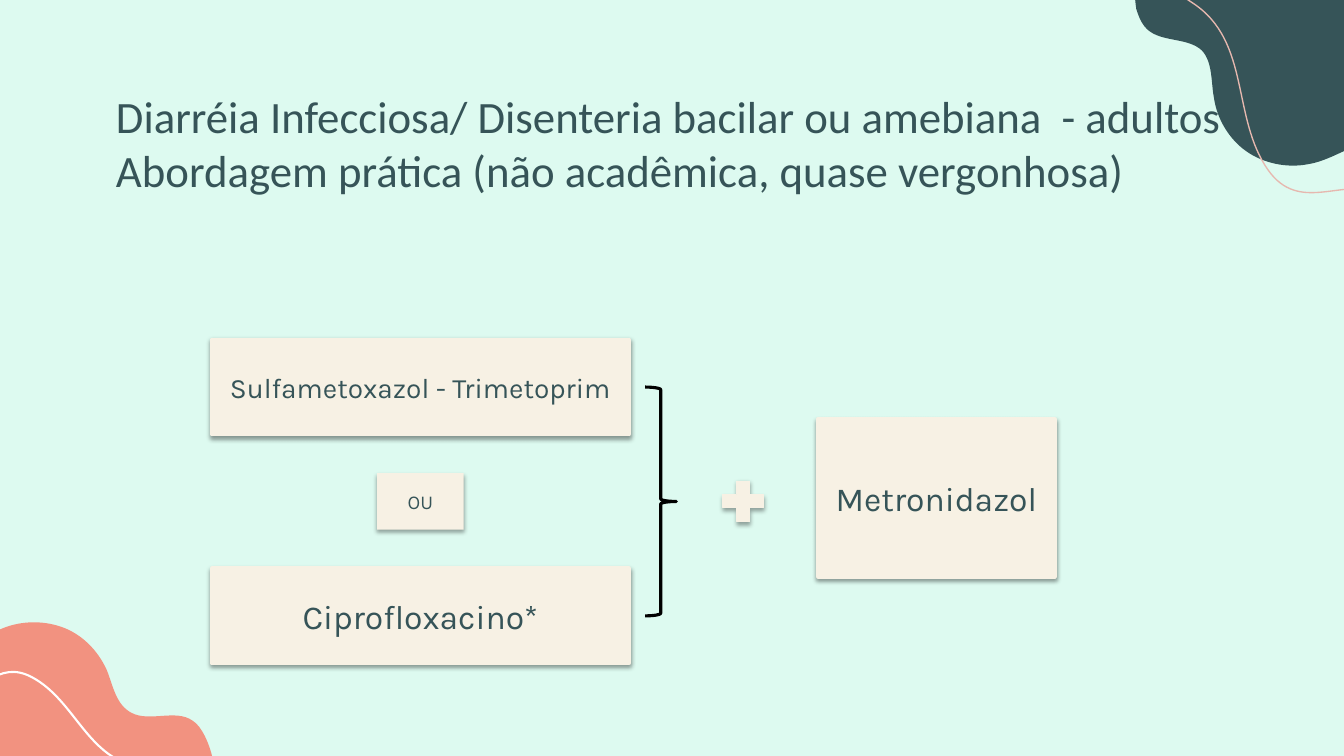
from lxml import etree
from pptx import Presentation
from pptx.dml.color import RGBColor
from pptx.enum.shapes import MSO_SHAPE
from pptx.enum.text import MSO_ANCHOR, MSO_AUTO_SIZE, PP_ALIGN
from pptx.oxml import parse_xml
from pptx.oxml.ns import nsdecls, qn
from pptx.util import Inches, Pt

RECTANGLE, PLUS, BRACE = MSO_SHAPE.RECTANGLE, MSO_SHAPE.MATH_PLUS, MSO_SHAPE.RIGHT_BRACE
CENTER, LEFT = PP_ALIGN.CENTER, PP_ALIGN.LEFT
MIDDLE, TOP = MSO_ANCHOR.MIDDLE, MSO_ANCHOR.TOP

MINT = RGBColor(0xDD, 0xFA, 0xF0)
TEAL = RGBColor(0x36, 0x54, 0x58)
CORAL = RGBColor(0xF2, 0x92, 0x80)
CREAM = RGBColor(0xF7, 0xF1, 0xE4)
PINK = RGBColor(0xE6, 0xB8, 0xAF)
WHITE = RGBColor(0xFF, 0xFF, 0xFF)
BLACK = RGBColor(0, 0, 0)

WIDTH, HEIGHT = Inches(13.33), Inches(7.5)

# Centres, in percent of the slide's width and height
ANTIBIOTIC_COLUMN = 31.28
FIRST_ROW, LAST_ROW = 51.2, 81.47
AXIS = (FIRST_ROW + LAST_ROW) / 2

TITLE_LINES = (
    "Diarréia Infecciosa/ Disenteria bacilar ou amebiana  - adultos",
    "Abordagem prática (não acadêmica, quase vergonhosa)",
)

# Outlines in inches: a start point, then two control points and an end per curve
TEAL_BLOB = [
    (12.97, 1.63), (12.76, 1.67), (12.53, 1.62), (12.36, 1.5),
    (12.19, 1.38), (12.07, 1.18), (12.04, 0.97), (12.01, 0.81), (12.03, 0.62), (11.92, 0.5),
    (11.77, 0.36), (11.48, 0.43), (11.35, 0.26), (11.31, 0.21), (11.29, 0.15), (11.27, 0.09),
    (11.24, -0.11), (11.25, -0.32), (11.33, -0.51), (11.37, -0.61), (11.42, -0.71), (11.51, -0.77),
    (11.62, -0.85), (11.77, -0.87), (11.9, -0.87), (12.27, -0.86), (12.65, -0.76), (12.96, -0.56),
    (13.14, -0.44), (13.29, -0.29), (13.44, -0.12), (13.55, 0.01), (13.67, 0.14), (13.75, 0.3),
    (13.87, 0.53), (14.01, 1.05), (13.82, 1.28), (13.75, 1.37), (13.61, 1.39), (13.5, 1.43),
    (13.32, 1.49), (13.16, 1.6), (12.97, 1.63),
]
CORAL_BLOB = [
    (-0.01, 6.25), (0.18, 6.16), (0.41, 6.15), (0.61, 6.22),
    (0.81, 6.29), (0.97, 6.45), (1.06, 6.65), (1.12, 6.8), (1.15, 6.99), (1.3, 7.07),
    (1.48, 7.17), (1.74, 7.03), (1.91, 7.15), (1.96, 7.18), (2, 7.24), (2.03, 7.3),
    (2.12, 7.48), (2.15, 7.69), (2.13, 7.89), (2.12, 8), (2.09, 8.11), (2.03, 8.19),
    (1.94, 8.3), (1.8, 8.35), (1.67, 8.38), (1.31, 8.48), (0.93, 8.48), (0.57, 8.36),
    (0.37, 8.3), (0.18, 8.19), (0, 8.07), (-0.15, 7.98), (-0.3, 7.88), (-0.41, 7.75),
    (-0.6, 7.55), (-0.87, 7.1), (-0.75, 6.82), (-0.7, 6.71), (-0.57, 6.66), (-0.48, 6.59),
    (-0.32, 6.48), (-0.19, 6.34), (-0.01, 6.25),
]
WHITE_WAVE = [
    (0.93, 9.19), (0.96, 9.19), (0.98, 9.19), (1.01, 9.18),
    (1.59, 9.13), (2.36, 8.88), (2.42, 8.21), (2.43, 8.03), (2.35, 7.82), (2.19, 7.72),
    (1.94, 7.58), (1.67, 7.65), (1.4, 7.61), (0.87, 7.54), (0.75, 6.95), (0.32, 6.72),
    (-0.03, 6.53), (-0.2, 6.9), (-0.49, 6.94), (-0.83, 6.98), (-1.04, 6.52), (-1.38, 6.55),
    (-1.5, 6.56), (-1.55, 6.71), (-1.57, 6.83), (-1.63, 7.5), (-1.26, 8.22), (-0.7, 8.67),
    (-0.23, 9.05), (0.37, 9.22), (0.93, 9.19),
]
PINK_WAVE = [
    (13.28, -1.55), (13.25, -1.56), (13.21, -1.57), (13.18, -1.59),
    (12.48, -1.85), (11.43, -2), (10.98, -1.26), (10.86, -1.05), (10.84, -0.76), (10.97, -0.55),
    (11.18, -0.24), (11.54, -0.17), (11.83, 0.03), (12.41, 0.41), (12.21, 1.17), (12.58, 1.69),
    (12.88, 2.11), (13.29, 1.78), (13.65, 1.9), (14.07, 2.04), (14.06, 2.7), (14.46, 2.86),
    (14.62, 2.92), (14.76, 2.77), (14.85, 2.63), (15.3, 1.89), (15.28, 0.84), (14.89, -0.01),
    (14.56, -0.72), (13.95, -1.26), (13.28, -1.55),
]


def centred_box(x, y, width, height):
    """Turn a centre and a size in percent of the slide into a position in EMU."""
    return (int((x - width / 2) * WIDTH / 100), int((y - height / 2) * HEIGHT / 100),
            int(width * WIDTH / 100), int(height * HEIGHT / 100))


def paint(shape, fill=None, line=None, line_width=1):
    shape.shadow.inherit = False
    if fill is None:
        shape.fill.background()
    else:
        shape.fill.solid()
        shape.fill.fore_color.rgb = fill
    if line is None:
        shape.line.fill.background()
    else:
        shape.line.color.rgb = line
        shape.line.width = Pt(line_width)


def bend_segments(shape):
    """Join every three straight segments into one cubic curve."""
    segments = list(shape._element.iter(qn("a:lnTo")))
    for first in range(0, len(segments), 3):
        curve = etree.Element(qn("a:cubicBezTo"))
        segments[first].addprevious(curve)
        for segment in segments[first:first + 3]:
            curve.append(segment[0])
            segment.getparent().remove(segment)


def add_curved_shape(slide, outline, **colours):
    start, *points = [(Inches(x), Inches(y)) for x, y in outline]
    builder = slide.shapes.build_freeform(*start)
    builder.add_line_segments(points, close=True)
    shape = builder.convert_to_shape()
    bend_segments(shape)
    paint(shape, **colours)


def add_run(paragraph, text, font, size):
    run = paragraph.add_run()
    run.text = text
    run.font.name = font
    run.font.size = Pt(size)
    run.font.color.rgb = TEAL


def add_soft_shadow(shape, opacity, distance):
    effects = shape._element.spPr.find(qn("a:effectLst"))
    effects.append(parse_xml(
        f'<a:outerShdw {nsdecls("a")} blurRad="{Pt(3.1)}" dist="{Pt(distance)}" dir="5400000" '
        f'rotWithShape="0"><a:srgbClr val="{BLACK}"><a:alpha val="{opacity * 1000}"/>'
        '</a:srgbClr></a:outerShdw>'))


def add_cream_shape(slide, kind, box, line_width=None, opacity=35, distance=1.8):
    shape = slide.shapes.add_shape(kind, *centred_box(*box))
    paint(shape, CREAM, CREAM if line_width else None, line_width)
    add_soft_shadow(shape, opacity, distance)
    return shape


def add_label(shape, text, size):
    frame = shape.text_frame
    frame.word_wrap = True
    frame.vertical_anchor = MIDDLE
    paragraph = frame.paragraphs[0]
    paragraph.alignment = CENTER
    add_run(paragraph, text, "Karla", size)


def add_drug(slide, text, size, box):
    add_label(add_cream_shape(slide, RECTANGLE, box, 3, 38, 1.6), text, size)


def format_title(slide):
    title = slide.shapes.title
    title.left, title.top, title.width, title.height = centred_box(50.03, 15.93, 84.3, 11.07)
    frame = title.text_frame
    frame.word_wrap = True
    frame.auto_size = MSO_AUTO_SIZE.NONE
    frame.vertical_anchor = TOP
    frame.margin_left = frame.margin_right = frame.margin_top = frame.margin_bottom = Inches(0.1)
    paragraph = frame.paragraphs[0]
    paragraph.alignment = LEFT
    first, second = TITLE_LINES
    add_run(paragraph, first, "Calibri", 32)
    paragraph.add_line_break()
    add_run(paragraph, second, "Calibri", 32)
    slide.shapes._spTree.append(title._element)  # in front of the corner shapes


def main():
    presentation = Presentation()
    presentation.slide_width, presentation.slide_height = WIDTH, HEIGHT
    slide = presentation.slides.add_slide(presentation.slide_layouts[5])
    slide.background.fill.solid()
    slide.background.fill.fore_color.rgb = MINT

    add_curved_shape(slide, TEAL_BLOB, fill=TEAL)
    add_curved_shape(slide, CORAL_BLOB, fill=CORAL)
    add_curved_shape(slide, WHITE_WAVE, line=WHITE, line_width=1.5)
    add_curved_shape(slide, PINK_WAVE, line=PINK, line_width=0.95)
    format_title(slide)

    add_drug(slide, "Sulfametoxazol - Trimetoprim", 20, (ANTIBIOTIC_COLUMN, FIRST_ROW, 31.05, 12.53))
    add_drug(slide, "Metronidazol", 24, (69.67, 65.87, 17.63, 20.8))
    add_drug(slide, "Ciprofloxacino*", 24, (ANTIBIOTIC_COLUMN, LAST_ROW, 31.05, 12.53))
    either = add_cream_shape(slide, RECTANGLE, (ANTIBIOTIC_COLUMN, AXIS, 6.45, 7.47))
    add_label(either, "OU", 14)
    add_cream_shape(slide, PLUS, (55.31, AXIS, 4.13, 7.33), 0.75)
    brace = slide.shapes.add_shape(BRACE, *centred_box(49.16, AXIS, 2.33, LAST_ROW - FIRST_ROW))
    paint(brace, line=BLACK, line_width=2.25)

    presentation.save("out.pptx")


if __name__ == "__main__":
    main()
